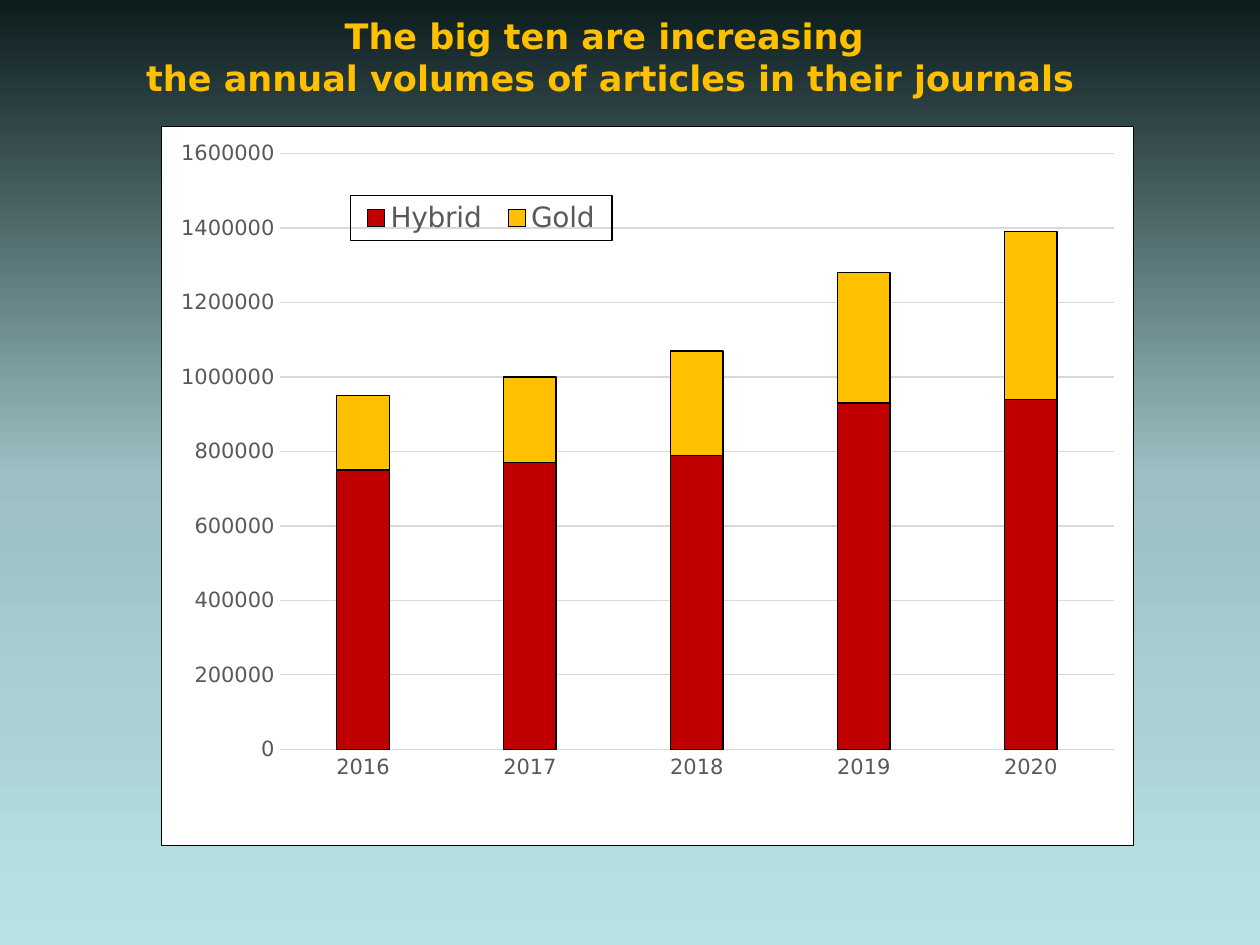
from lxml import etree
from pptx import Presentation
from pptx import util as u
from pptx.chart.data import CategoryChartData
from pptx.dml.color import RGBColor
from pptx.enum import chart as charts, text
from pptx.oxml import parse_xml
from pptx.oxml.ns import nsdecls, qn

TITLE = "The big ten are increasing \vthe annual volumes of articles in their journals"
YEARS = ["2016", "2017", "2018", "2019", "2020"]
ARTICLES = {
    "Hybrid": [750000, 770000, 790000, 930000, 940000],
    "Gold": [200000, 230000, 280000, 350000, 450000],
}

THEME = {
    "font": "DejaVu Sans",
    "title": "FFC000", "label": "595959", "grid": "D9D9D9",
    "border": "000000", "panel": "FFFFFF",
    "Hybrid": "C00000", "Gold": "FFC000",
    "background": [(0, "0C1C1D"), (50, "9BBFC2"), (100, "B8E3E6")],
    "title_size": 20, "axis_size": 12, "legend_size": 16,
    "line": 0.75,
}

# Boxes in px: left, top, width, height
SLIDE_SIZE = (1260, 945)
TITLE_BOX = (38, 25, 1145, 63)
CHART_BOX = (161, 126, 973, 720)
PLOT_BOX = (279, 153, 836, 597)
LEGEND_BOX = (350, 195, 262, 45)


def px(value):
    return u.Emu(round(value * 914400 / 126))


def color(name):
    return RGBColor.from_string(THEME[name])


def format_font(font, size, color_name, bold=False):
    font.name = THEME["font"]
    font.size = u.Pt(size)
    font.bold = bold
    font.color.rgb = color(color_name)


def write_text(frame, words, size, color_name, bold=False, align=text.PP_ALIGN.CENTER):
    frame.text = words
    frame.word_wrap = True
    frame.auto_size = text.MSO_AUTO_SIZE.NONE
    frame.vertical_anchor = text.MSO_ANCHOR.MIDDLE
    paragraph = frame.paragraphs[0]
    paragraph.alignment = align
    for run in paragraph.runs:
        format_font(run.font, size, color_name, bold)


def format_line(line, color_name):
    line.color.rgb = color(color_name)
    line.width = u.Pt(THEME["line"])


def paint_background(slide):
    fill = slide.background.fill
    fill.gradient()
    fill.gradient_angle = 270
    stops = slide.element.find(".//" + qn("a:gsLst"))
    for stop in list(stops):
        stops.remove(stop)
    for position, rgb in THEME["background"]:
        stop = etree.SubElement(stops, qn("a:gs"), pos=str(position * 1000))
        etree.SubElement(stop, qn("a:srgbClr"), val=rgb)


def place_in_chart(element, index, box, inner=False):
    """Give a plot area or legend a fixed place, as fractions of the chart."""
    for old in element.findall(qn("c:layout")):
        element.remove(old)
    left, top, width, height = CHART_BOX
    fractions = {
        "x": (box[0] - left) / width, "y": (box[1] - top) / height,
        "w": box[2] / width, "h": box[3] / height,
    }
    layout = etree.Element(qn("c:layout"))
    manual = etree.SubElement(layout, qn("c:manualLayout"))
    if inner:
        etree.SubElement(manual, qn("c:layoutTarget"), val="inner")
    for axis in "xy":
        etree.SubElement(manual, qn(f"c:{axis}Mode"), val="edge")
    for key, fraction in fractions.items():
        etree.SubElement(manual, qn(f"c:{key}"), val=f"{fraction:.4f}")
    element.insert(index, layout)


def frame_properties(fill):
    return parse_xml(
        f'<c:spPr {nsdecls("c", "a")}>{fill}<a:ln w="{u.Pt(THEME["line"])}">'
        f'<a:solidFill><a:srgbClr val="{THEME["border"]}"/></a:solidFill></a:ln></c:spPr>'
    )


def add_article_chart(slide):
    data = CategoryChartData()
    data.categories = YEARS
    for name, values in ARTICLES.items():
        data.add_series(name, values)
    chart = slide.shapes.add_chart(
        charts.XL_CHART_TYPE.COLUMN_STACKED, *map(px, CHART_BOX), data).chart
    chart.has_title = False
    format_font(chart.font, 10, "border")

    plot = chart.plots[0]
    plot.gap_width, plot.overlap, plot.vary_by_categories = 219, 100, False
    for series in plot.series:
        series.format.fill.solid()
        series.format.fill.fore_color.rgb = color(series.name)
        format_line(series.format.line, "border")

    for axis in (chart.category_axis, chart.value_axis):
        axis.major_tick_mark = axis.minor_tick_mark = charts.XL_TICK_MARK.NONE
        format_font(axis.tick_labels.font, THEME["axis_size"], "label")
    format_line(chart.category_axis.format.line, "grid")
    value_axis = chart.value_axis
    value_axis.minimum_scale, value_axis.maximum_scale = 0, 1600000
    value_axis.major_unit = 200000
    value_axis.format.line.fill.background()
    value_axis.has_major_gridlines = True
    format_line(value_axis.major_gridlines.format.line, "grid")

    chart.has_legend = True
    legend = chart.legend
    legend.position = charts.XL_LEGEND_POSITION.BOTTOM
    legend.include_in_layout = False
    format_font(legend.font, THEME["legend_size"], "label")

    space = chart.element
    legend_element = space.find(".//" + qn("c:legend"))
    place_in_chart(space.find(".//" + qn("c:plotArea")), 0, PLOT_BOX, inner=True)
    place_in_chart(legend_element, 1, LEGEND_BOX)
    legend_element.find(qn("c:txPr")).addprevious(frame_properties("<a:noFill/>"))
    panel = f'<a:solidFill><a:srgbClr val="{THEME["panel"]}"/></a:solidFill>'
    space.find(qn("c:chart")).addnext(frame_properties(panel))


def main():
    presentation = Presentation()
    presentation.slide_width, presentation.slide_height = map(px, SLIDE_SIZE)
    slide = presentation.slides.add_slide(presentation.slide_layouts[5])
    paint_background(slide)
    title = slide.shapes.title
    title.left, title.top, title.width, title.height = map(px, TITLE_BOX)
    write_text(title.text_frame, TITLE, THEME["title_size"], "title", bold=True)
    add_article_chart(slide)
    presentation.save("out.pptx")


if __name__ == "__main__":
    main()
